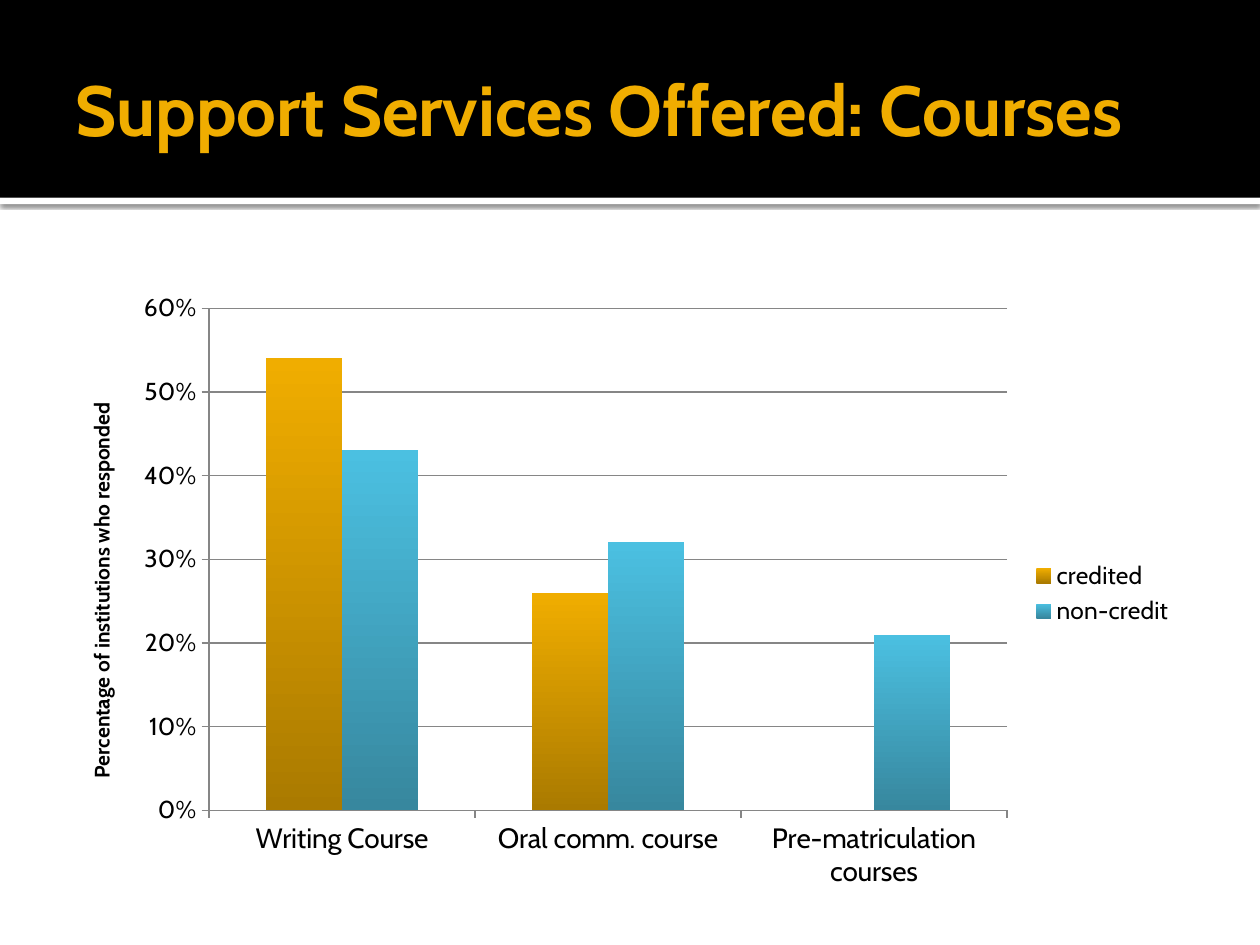
from lxml import etree
from pptx import Presentation
from pptx.chart.data import CategoryChartData
from pptx.dml.color import RGBColor
from pptx.enum.chart import XL_CHART_TYPE as ChartType
from pptx.enum.chart import XL_LEGEND_POSITION as LegendPosition
from pptx.enum.chart import XL_TICK_MARK as TickMark
from pptx.enum.shapes import MSO_SHAPE as Shape
from pptx.enum.text import MSO_ANCHOR as Anchor
from pptx.enum.text import MSO_AUTO_SIZE as AutoSize
from pptx.enum.text import PP_ALIGN as Align
from pptx.oxml import parse_xml
from pptx.oxml.ns import nsdecls, qn
from pptx.util import Inches, Pt

FONT = "Cabin"
BLACK = RGBColor(0x00, 0x00, 0x00)
WHITE = RGBColor(0xFF, 0xFF, 0xFF)
GREY = RGBColor(0x86, 0x86, 0x86)
GOLD = RGBColor(0xF0, 0xAD, 0x00)
DARK_GOLD = RGBColor(0xAA, 0x7A, 0x00)
BLUE = RGBColor(0x4B, 0xC0, 0xE1)
DARK_BLUE = RGBColor(0x37, 0x87, 0x9E)

COURSES = ["Writing Course", "Oral comm. course", "Pre-matriculation courses"]
SERIES = [
    ("credited", [0.54, 0.26, None], (GOLD, DARK_GOLD)),
    ("non-credit", [0.43, 0.32, 0.21], (BLUE, DARK_BLUE)),
]


def set_font(font, size, color=BLACK, bold=False):
    values = {"name": FONT, "size": Pt(size), "bold": bold}
    for name, value in values.items():
        setattr(font, name, value)
    font.color.rgb = color


def add_bar(slide, left, top, width, height, color):
    bar = slide.shapes.add_shape(Shape.RECTANGLE, left, top, width, height)
    bar.shadow.inherit = False
    bar.fill.solid()
    bar.fill.fore_color.rgb = color
    bar.line.fill.background()
    return bar


def add_header(slide, left, top, width, height):
    # White rule with a soft shadow, below the black band
    rule = add_bar(slide, left, top + height, width, Inches(0.05), WHITE)
    effects = rule._element.spPr.find(qn("a:effectLst"))
    effects.append(parse_xml(
        f'<a:outerShdw {nsdecls("a")} blurRad="{Pt(2.5)}" dist="{Pt(0.8)}" '
        'dir="5400000" algn="tl" rotWithShape="0"><a:srgbClr val="000000">'
        '<a:alpha val="60000"/></a:srgbClr></a:outerShdw>'))
    add_bar(slide, left, top, width, height, BLACK)

    # Title, brought in front of the band
    title = slide.shapes.title
    slide.shapes._spTree.append(title._element)
    box = {"left": left + Inches(0.5), "top": top + Inches(0.17),
           "width": width - Inches(1), "height": Inches(1.37)}
    for name, value in box.items():
        setattr(title, name, value)
    frame = title.text_frame
    frame.text = "Support Services Offered: Courses"
    margin = Inches(0.05)
    layout = {"margin_left": Inches(0.1), "margin_right": margin,
              "margin_top": margin, "margin_bottom": margin,
              "vertical_anchor": Anchor.MIDDLE, "word_wrap": True,
              "auto_size": AutoSize.NONE}
    for name, value in layout.items():
        setattr(frame, name, value)
    heading = frame.paragraphs[0]
    heading.alignment = Align.LEFT
    set_font(heading.runs[0].font, 40.5, GOLD, bold=True)


def set_plot_area(chart, **fractions):
    plot_area = chart._chartSpace.chart.plotArea
    for old in plot_area.findall(qn("c:layout")):
        plot_area.remove(old)
    layout = parse_xml(f'<c:layout {nsdecls("c")}><c:manualLayout/></c:layout>')
    settings = {"layoutTarget": "inner", "xMode": "edge", "yMode": "edge", **fractions}
    for tag, value in settings.items():
        etree.SubElement(layout[0], qn(f"c:{tag}")).set("val", str(value))
    plot_area.insert(0, layout)


def add_course_chart(slide, left, top, width, height):
    data = CategoryChartData(number_format="0%")
    data.categories = COURSES
    for name, shares, _ in SERIES:
        data.add_series(name, shares)
    chart = slide.shapes.add_chart(
        ChartType.COLUMN_CLUSTERED, left, top, width, height, data).chart
    chart.has_title = False
    set_font(chart.font, 10)
    set_plot_area(chart, x=0.13, y=0.04, w=0.71, h=0.81)

    # Columns
    columns = chart.plots[0]
    columns.gap_width = 150
    columns.overlap = 0
    columns.vary_by_categories = False
    for series, (_, _, shades) in zip(columns.series, SERIES):
        series.invert_if_negative = False
        fill = series.format.fill
        fill.gradient()
        fill.gradient_angle = 270
        for stop, shade in zip(fill.gradient_stops, shades):
            stop.color.rgb = shade

    # Axes
    shares_axis = chart.value_axis
    for axis, size in ((chart.category_axis, 16), (shares_axis, 14)):
        axis.major_tick_mark = TickMark.OUTSIDE
        axis.minor_tick_mark = TickMark.NONE
        axis.format.line.color.rgb = GREY
        axis.format.line.width = Pt(0.75)
        set_font(axis.tick_labels.font, size)
    scale = {"minimum_scale": 0, "maximum_scale": 0.6, "major_unit": 0.1,
             "has_major_gridlines": True}
    for name, value in scale.items():
        setattr(shares_axis, name, value)
    gridline = shares_axis.major_gridlines.format.line
    gridline.color.rgb = GREY
    gridline.width = Pt(0.75)
    shares_axis.tick_labels.number_format = "0%"
    shares_axis.tick_labels.number_format_is_linked = False
    caption = shares_axis.axis_title.text_frame
    caption.text = "Percentage of institutions who responded"
    set_font(caption.paragraphs[0].runs[0].font, 12, bold=True)

    # Legend
    chart.has_legend = True
    chart.legend.position = LegendPosition.RIGHT
    chart.legend.include_in_layout = False
    set_font(chart.legend.font, 14)


def main():
    deck = Presentation()
    deck.slide_width, deck.slide_height = Inches(10), Inches(7.5)
    slide = deck.slides.add_slide(deck.slide_layouts[5])
    slide.background.fill.solid()
    slide.background.fill.fore_color.rgb = WHITE
    add_header(slide, 0, 0, deck.slide_width, Inches(1.57))
    add_course_chart(slide, Inches(0.5), Inches(2.25), Inches(8.92), Inches(4.92))
    deck.save("out.pptx")


if __name__ == "__main__":
    main()
